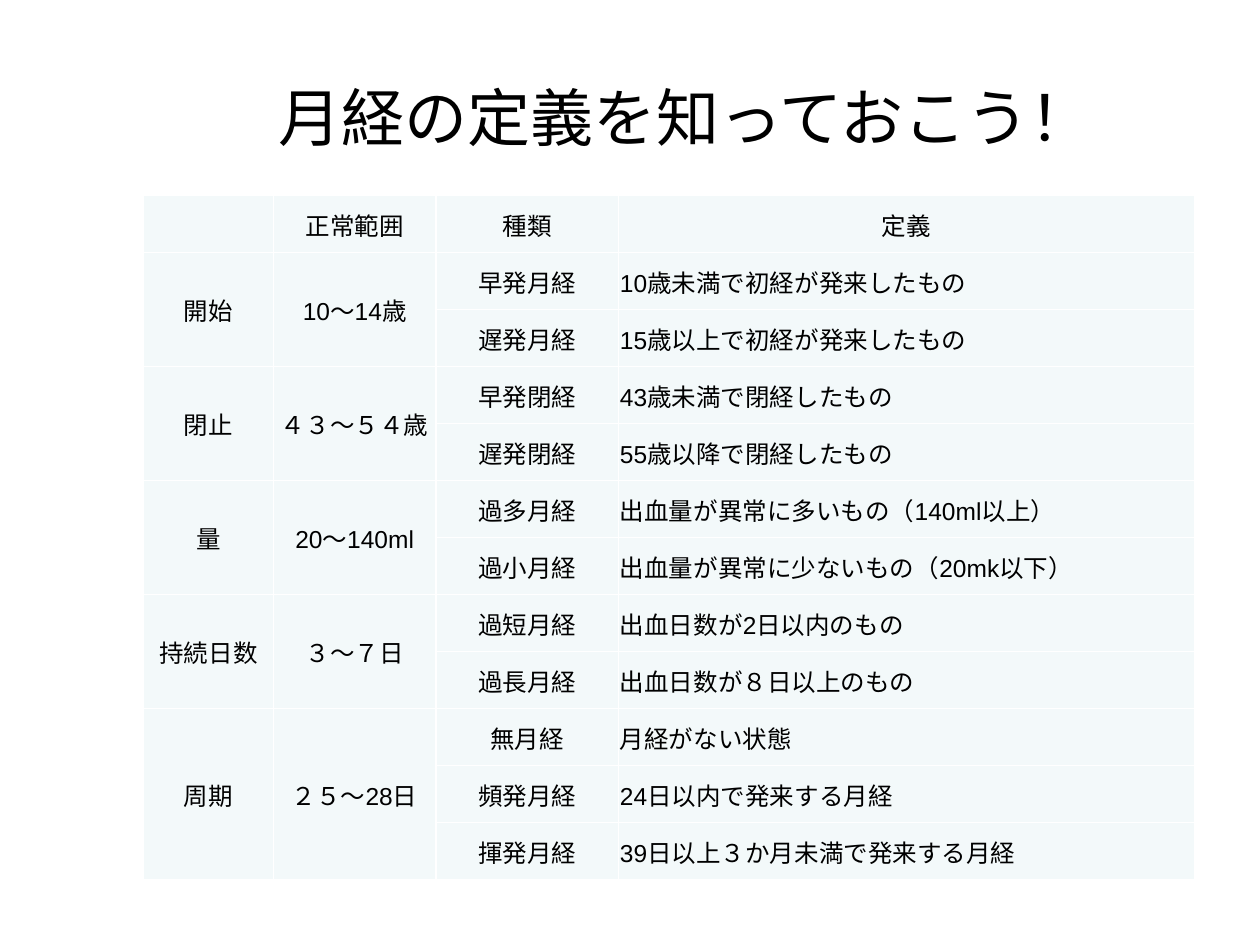
import pptx
import pptx.dml.color
import pptx.enum.text
import pptx.oxml.ns
import pptx.util
from lxml import etree

Inches = pptx.util.Inches
Pt = pptx.util.Pt
ALIGN = pptx.enum.text.PP_ALIGN
MIDDLE = pptx.enum.text.MSO_ANCHOR.MIDDLE

FONT = "Arial"
BLACK, WHITE, PALE = "000000", "FFFFFF", "F3F9FA"

COL_WIDTHS = [1.03, 1.29, 1.45, 4.57]
ROW_HEIGHT = 5.43 / 12
HEADERS = ["", "正常範囲", "種類", "定義"]
# Each group: item, normal range, [(kind, definition), ...]
GROUPS = [
    ("開始", "10～14歳", [
        ("早発月経", "10歳未満で初経が発来したもの"),
        ("遅発月経", "15歳以上で初経が発来したもの")]),
    ("閉止", "４３～５４歳", [
        ("早発閉経", "43歳未満で閉経したもの"),
        ("遅発閉経", "55歳以降で閉経したもの")]),
    ("量", "20～140ml", [
        ("過多月経", "出血量が異常に多いもの（140ml以上）"),
        ("過小月経", "出血量が異常に少ないもの（20mk以下）")]),
    ("持続日数", "３～７日", [
        ("過短月経", "出血日数が2日以内のもの"),
        ("過長月経", "出血日数が８日以上のもの")]),
    ("周期", "２５～28日", [
        ("無月経", "月経がない状態"),
        ("頻発月経", "24日以内で発来する月経"),
        ("揮発月経", "39日以上３か月未満で発来する月経")]),
]


def rgb(value):
    return pptx.dml.color.RGBColor.from_string(value)


def write(tf, text, size, align):
    p = tf.paragraphs[0]
    p.alignment = align
    r = p.add_run()
    r.text = text
    r.font.name = FONT
    r.font.size = Pt(size)
    r.font.color.rgb = rgb(BLACK)


def add_title(s, text):
    sp = s.shapes.title
    sp.left, sp.top = Inches(1.38), Inches(0.3)
    sp.width, sp.height = Inches(8.12), Inches(1.25)
    sp.text_frame.vertical_anchor = MIDDLE
    write(sp.text_frame, text, 36, ALIGN.CENTER)


def set_borders(cell, color, width):
    tcPr = cell._tc.get_or_add_tcPr()
    qn = pptx.oxml.ns.qn
    for side in ("a:lnL", "a:lnR", "a:lnT", "a:lnB"):
        ln = etree.SubElement(tcPr, qn(side), w=str(Pt(width)))
        fill = etree.SubElement(ln, qn("a:solidFill"))
        etree.SubElement(fill, qn("a:srgbClr"), val=color)


def format_cell(cell):
    set_borders(cell, WHITE, 1)
    cell.fill.solid()
    cell.fill.fore_color.rgb = rgb(PALE)
    cell.vertical_anchor = MIDDLE
    cell.margin_left = cell.margin_right = cell.margin_top = Inches(0.01)
    cell.margin_bottom = 0


def fill_cell(cell, text, align=ALIGN.CENTER):
    if text:
        write(cell.text_frame, text, 14, align)


def add_definition_table(s):
    row_count = 1 + sum(len(kinds) for _, _, kinds in GROUPS)
    table = s.shapes.add_table(
        row_count, len(COL_WIDTHS), Inches(1.14), Inches(1.55),
        Inches(sum(COL_WIDTHS)), Inches(ROW_HEIGHT * row_count)).table
    for col, width in zip(table.columns, COL_WIDTHS):
        col.width = Inches(width)
    for row in table.rows:
        row.height = Inches(ROW_HEIGHT)
    for cell in table.iter_cells():
        format_cell(cell)

    for col, text in enumerate(HEADERS):
        fill_cell(table.cell(0, col), text)
    top = 1
    for item, normal, kinds in GROUPS:
        bottom = top + len(kinds) - 1
        for col, text in enumerate((item, normal)):
            table.cell(top, col).merge(table.cell(bottom, col))
            fill_cell(table.cell(top, col), text)
        for row, (kind, definition) in enumerate(kinds, top):
            fill_cell(table.cell(row, 2), kind)
            fill_cell(table.cell(row, 3), definition, ALIGN.LEFT)
        top = bottom + 1


def main():
    prs = pptx.Presentation()
    prs.slide_width, prs.slide_height = Inches(10), Inches(7.5)
    s = prs.slides.add_slide(prs.slide_layouts[5])
    add_title(s, "月経の定義を知っておこう！")
    add_definition_table(s)
    prs.save("out.pptx")


if __name__ == "__main__":
    main()
